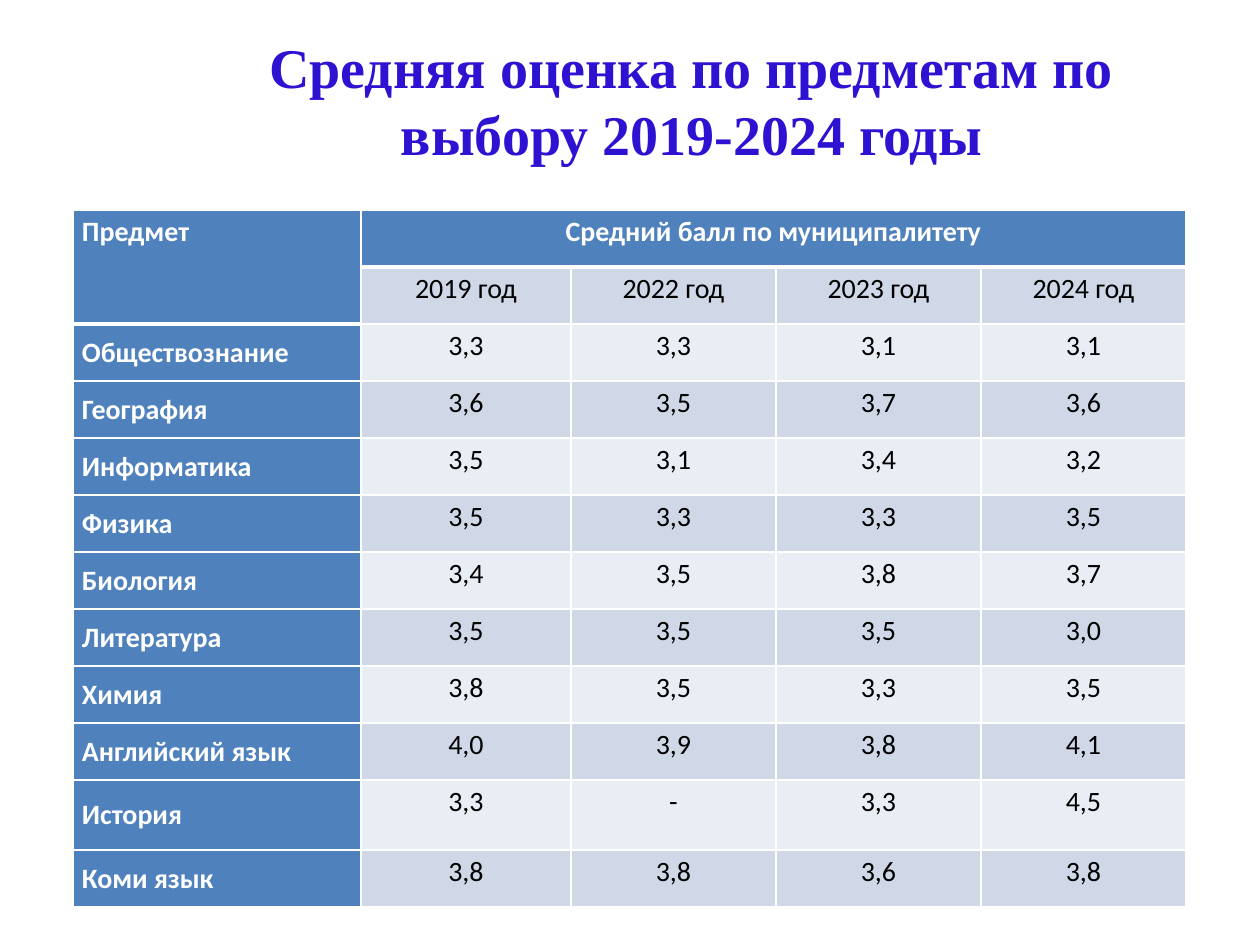
from lxml import etree
from pptx import Presentation
from pptx import util as u
from pptx.dml.color import RGBColor
from pptx.enum import text
from pptx.oxml.ns import qn

C = {"title": "2D12D2", "head": "4F81BD", "dark": "D0D8E8", "light": "E9EDF4",
     "white": "FFFFFF", "black": "000000"}
YEARS = ["2019 год", "2022 год", "2023 год", "2024 год"]
GRADES = [
    ("Обществознание", "3,3", "3,3", "3,1", "3,1"),
    ("География", "3,6", "3,5", "3,7", "3,6"),
    ("Информатика", "3,5", "3,1", "3,4", "3,2"),
    ("Физика", "3,5", "3,3", "3,3", "3,5"),
    ("Биология", "3,4", "3,5", "3,8", "3,7"),
    ("Литература", "3,5", "3,5", "3,5", "3,0"),
    ("Химия", "3,8", "3,5", "3,3", "3,5"),
    ("Английский язык", "4,0", "3,9", "3,8", "4,1"),
    ("История", "3,3", "-", "3,3", "4,5"),
    ("Коми язык", "3,8", "3,8", "3,6", "3,8"),
]
COLS = [288, 210, 205, 205, 205]
ROW_H, TALL_ROW_H = 57, 70


def px(n):
    return u.Emu(round(n * 914400 / 126))


def rgb(name):
    return RGBColor.from_string(C[name])


def set_font(p, name, size, color, bold):
    f = p.font
    f.name, f.size, f.bold = name, u.Pt(size), bold
    f.color.rgb = rgb(color)


def set_borders(cell, bottom):
    tc_pr = cell._tc.get_or_add_tcPr()
    for side, width in (("L", 1), ("R", 1), ("T", 1), ("B", bottom)):
        ln = etree.SubElement(tc_pr, qn(f"a:ln{side}"), w=str(u.Pt(width)))
        fill = etree.SubElement(ln, qn("a:solidFill"))
        etree.SubElement(fill, qn("a:srgbClr"), val=C["white"])


def add_title(s, box):
    sp = s.shapes.title
    sp.left, sp.top, sp.width, sp.height = map(px, box)
    tf = sp.text_frame
    tf.text = "Средняя оценка по предметам по выбору 2019-2024 годы"
    tf.word_wrap = True
    tf.auto_size = text.MSO_AUTO_SIZE.SHAPE_TO_FIT_TEXT
    tf.vertical_anchor = text.MSO_ANCHOR.TOP
    tf.margin_left = tf.margin_right = tf.margin_top = tf.margin_bottom = 0
    p = tf.paragraphs[0]
    p.alignment = text.PP_ALIGN.CENTER
    set_font(p, "Times New Roman", 32, "title", True)


def style_cell(cell, row, col, value):
    header = row == 0 or col == 0
    subject = row > 1 and col == 0
    set_borders(cell, 3 if row == 0 or (row, col) == (1, 0) else 1)
    band = "light" if row % 2 == 0 else "dark"
    cell.fill.solid()
    cell.fill.fore_color.rgb = rgb("head" if header else band)
    cell.margin_left = cell.margin_right = px(9)
    cell.margin_top = cell.margin_bottom = 0
    cell.vertical_anchor = text.MSO_ANCHOR.MIDDLE if subject else text.MSO_ANCHOR.TOP
    cell.text = value
    p = cell.text_frame.paragraphs[0]
    p.alignment = text.PP_ALIGN.CENTER if col else text.PP_ALIGN.LEFT
    p.line_spacing = 1.0 if subject else 1.15
    set_font(p, "Calibri", 16, "white" if header else "black", header)


def add_grades(s, box):
    rows = [("Предмет", "Средний балл по муниципалитету", "", "", ""),
            ("", *YEARS), *GRADES]
    table = s.shapes.add_table(len(rows), len(COLS), *map(px, box)).table
    for column, width in zip(table.columns, COLS):
        column.width = px(width)
    for i, values in enumerate(rows):
        table.rows[i].height = px(TALL_ROW_H if values[0] == "История" else ROW_H)
        for j, value in enumerate(values):
            style_cell(table.cell(i, j), i, j, value)
    table.cell(0, 0).merge(table.cell(1, 0))
    table.cell(0, 1).merge(table.cell(0, 4))


def main():
    prs = Presentation()
    prs.slide_width, prs.slide_height = px(1260), px(945)
    s = prs.slides.add_slide(prs.slide_layouts[5])
    add_title(s, (180, 32, 1023, 136))
    add_grades(s, (73, 210, sum(COLS), 697))
    prs.save("out.pptx")


if __name__ == "__main__":
    main()
